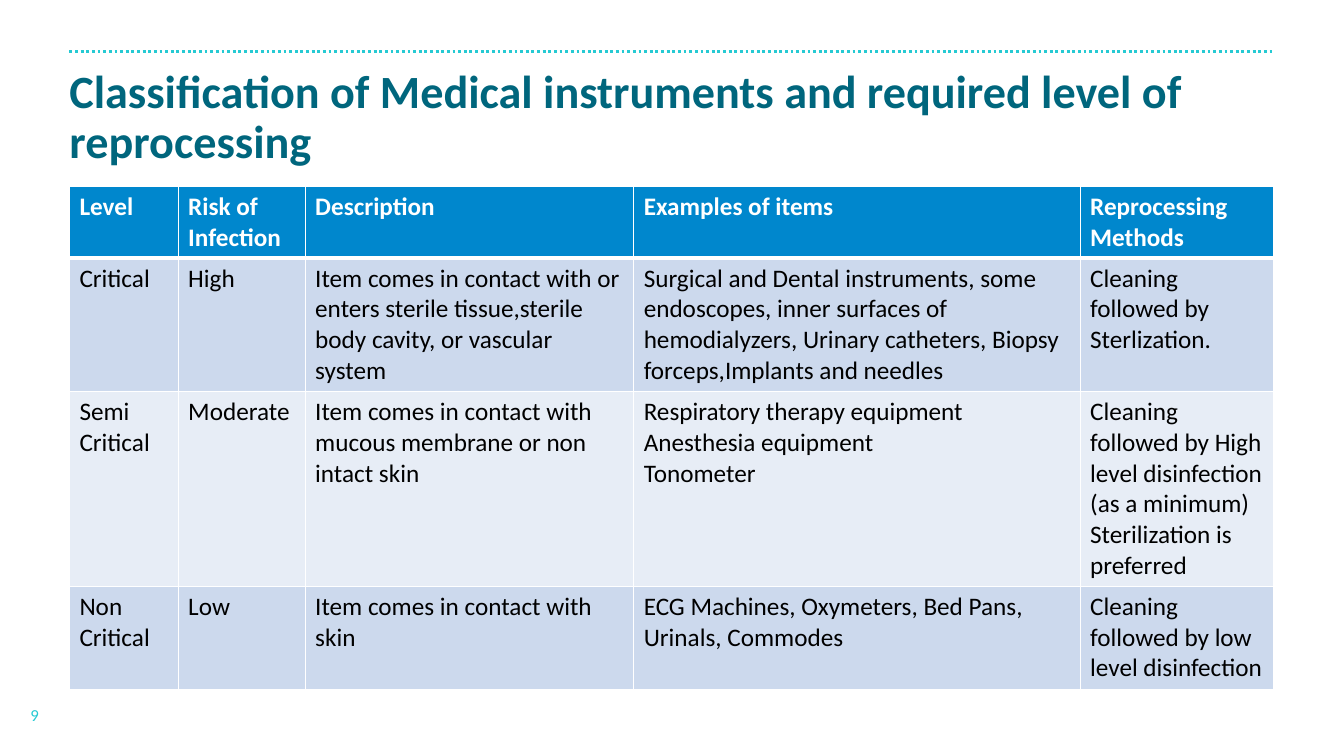
import lxml.etree
import pptx
import pptx.dml.color
import pptx.enum.dml
import pptx.enum.shapes
import pptx.enum.text
import pptx.oxml.ns
import pptx.util
from pptx.util import Cm

COLOURS = {
    "rule": "26CAD3",
    "title": "00667D",
    "header": "0087CD",
    "odd_row": "CCD9ED",
    "even_row": "E7EDF6",
    "white": "FFFFFF",
    "black": "000000",
}
FONT = "Calibri"
LEFT, WIDTH = Cm(1.75), Cm(30.35)
COLUMN_WIDTHS = [2.74, 3.2, 8.28, 11.25, 4.88]
ROW_HEIGHTS = [1.8, 3.36, 4.91, 2.6]
ROWS = [
    ["Level", "Risk of Infection", "Description", "Examples of items",
     "Reprocessing Methods"],
    ["Critical", "High",
     "Item comes in contact with or enters sterile tissue,sterile body cavity, "
     "or vascular system",
     "Surgical and Dental instruments, some endoscopes, inner surfaces of "
     "hemodialyzers, Urinary catheters, Biopsy forceps,Implants and needles",
     "Cleaning followed by Sterlization."],
    ["Semi Critical", "Moderate",
     "Item comes in contact with mucous membrane or non intact skin",
     "Respiratory therapy equipment\nAnesthesia equipment\nTonometer",
     "Cleaning followed by High level disinfection (as a minimum)\n"
     "Sterilization is preferred"],
    ["Non Critical", "Low", "Item comes in contact with skin",
     "ECG Machines, Oxymeters, Bed Pans, Urinals, Commodes",
     "Cleaning followed by low level disinfection"],
]


def colour(name):
    """Return the named colour as an RGB value."""
    return pptx.dml.color.RGBColor.from_string(COLOURS[name])


def format_text(frame, size, colour_name, bold=False):
    """Apply one font style to every run in a text frame."""
    for para in frame.paragraphs:
        for span in para.runs:
            span.font.name = FONT
            span.font.size = pptx.util.Pt(size)
            span.font.bold = bold
            span.font.color.rgb = colour(colour_name)


def add_rule(page, left, top, width):
    """Draw the dotted rule across the top of the slide."""
    rule = page.shapes.add_connector(
        pptx.enum.shapes.MSO_CONNECTOR.STRAIGHT, left, top, left + width, top)
    rule.line.color.rgb = colour("rule")
    rule.line.width = pptx.util.Pt(2)
    rule.line.dash_style = pptx.enum.dml.MSO_LINE.ROUND_DOT
    lxml.etree.SubElement(rule._element.spPr, pptx.oxml.ns.qn("a:effectLst"))


def place_title(page, left, top, width, height):
    """Place and format the title placeholder."""
    title = page.shapes.title
    title.left, title.top, title.width, title.height = left, top, width, height
    frame = title.text_frame
    frame.text = ("Classification of Medical instruments and required level of "
                  "reprocessing")
    frame.word_wrap = True
    frame.auto_size = pptx.enum.text.MSO_AUTO_SIZE.NONE
    frame.vertical_anchor = pptx.enum.text.MSO_ANCHOR.TOP
    frame.margin_left = frame.margin_right = 0
    para = frame.paragraphs[0]
    para.alignment = pptx.enum.text.PP_ALIGN.LEFT
    para.line_spacing = 0.9
    format_text(frame, 33, "title", bold=True)


def add_borders(cell, points):
    """Give a cell white borders of the given widths, keyed by side."""
    properties = cell._tc.get_or_add_tcPr()
    for side in ("L", "R", "T", "B"):
        line = lxml.etree.SubElement(
            properties, pptx.oxml.ns.qn(f"a:ln{side}"),
            w=str(pptx.util.Pt(points.get(side, 1))))
        fill = lxml.etree.SubElement(line, pptx.oxml.ns.qn("a:solidFill"))
        lxml.etree.SubElement(
            fill, pptx.oxml.ns.qn("a:srgbClr"), val=COLOURS["white"])


def add_levels_table(page, left, top, width):
    """Build the table of instrument levels and reprocessing methods."""
    table = page.shapes.add_table(
        len(ROWS), len(COLUMN_WIDTHS), left, top, width,
        Cm(sum(ROW_HEIGHTS))).table
    for column, column_width in zip(table.columns, COLUMN_WIDTHS):
        column.width = Cm(column_width)
    for row, row_height in zip(table.rows, ROW_HEIGHTS):
        row.height = Cm(row_height)
    for row_index, texts in enumerate(ROWS):
        header = row_index == 0
        fill_name = "header" if header else (
            "odd_row" if row_index % 2 else "even_row")
        borders = {0: {"B": 3}, 1: {"T": 3}}.get(row_index, {})
        for column_index, text in enumerate(texts):
            cell = table.cell(row_index, column_index)
            cell.text_frame.text = text
            format_text(cell.text_frame, 18, "white" if header else "black", header)
            add_borders(cell, borders)
            cell.fill.solid()
            cell.fill.fore_color.rgb = colour(fill_name)


def add_page_number(page, left, top, width, height):
    """Add the centred slide number."""
    box = page.shapes.add_textbox(left, top, width, height)
    frame = box.text_frame
    frame.word_wrap = True
    frame.vertical_anchor = pptx.enum.text.MSO_ANCHOR.MIDDLE
    frame.text = "9"
    frame.paragraphs[0].alignment = pptx.enum.text.PP_ALIGN.CENTER
    format_text(frame, 12, "rule")


def build_classification_slide(deck):
    """Assemble the classification slide."""
    page = deck.slides.add_slide(deck.slide_layouts[5])
    add_rule(page, LEFT, Cm(1.3), WIDTH)
    place_title(page, LEFT, Cm(1.6), WIDTH, Cm(3.1))
    add_levels_table(page, LEFT, Cm(4.7), WIDTH)
    add_page_number(page, 0, Cm(17.5), LEFT, Cm(1.02))


def main():
    """Create and save the deck."""
    deck = pptx.Presentation()
    deck.slide_width, deck.slide_height = Cm(33.87), Cm(19.05)
    build_classification_slide(deck)
    deck.save("out.pptx")


if __name__ == "__main__":
    main()
